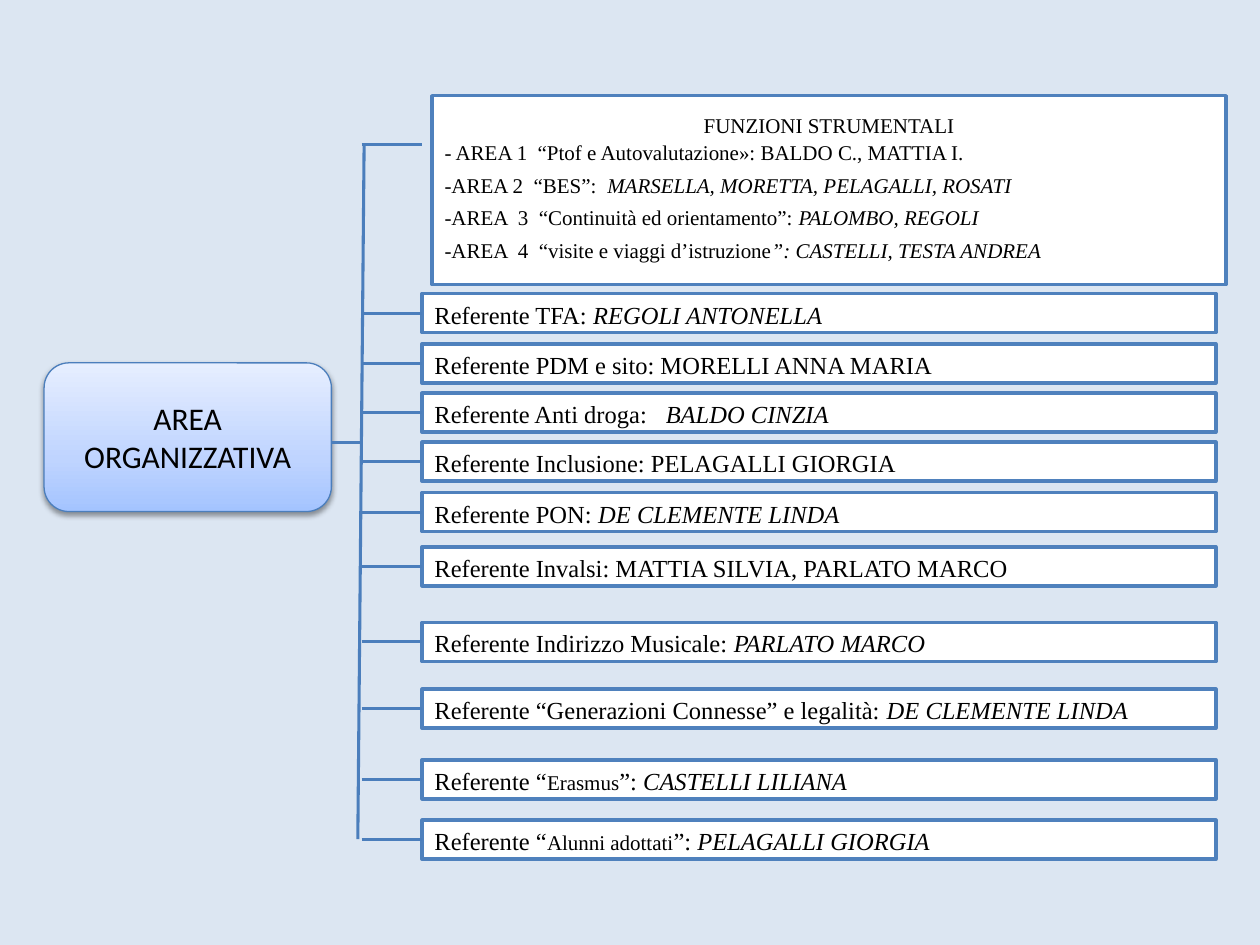
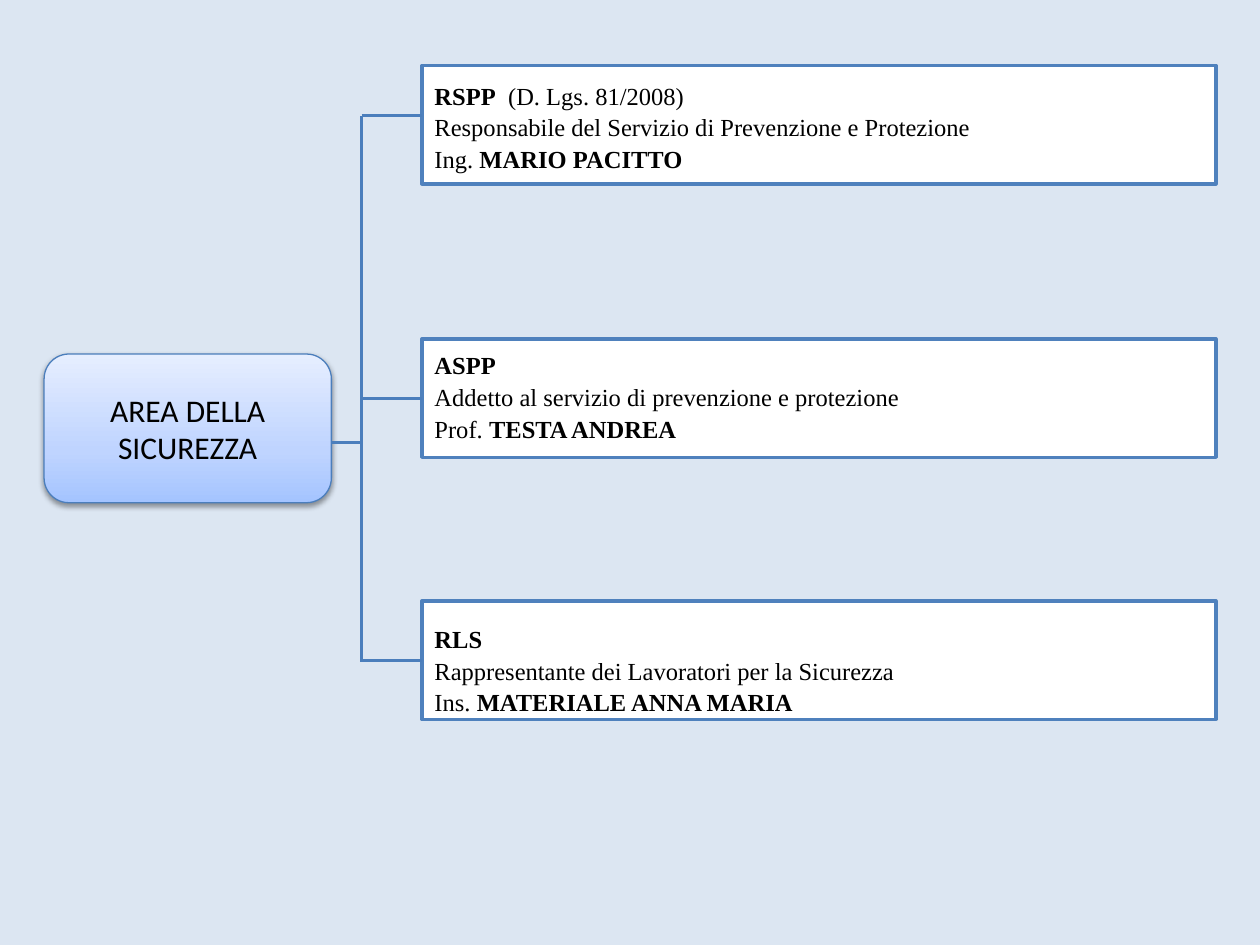
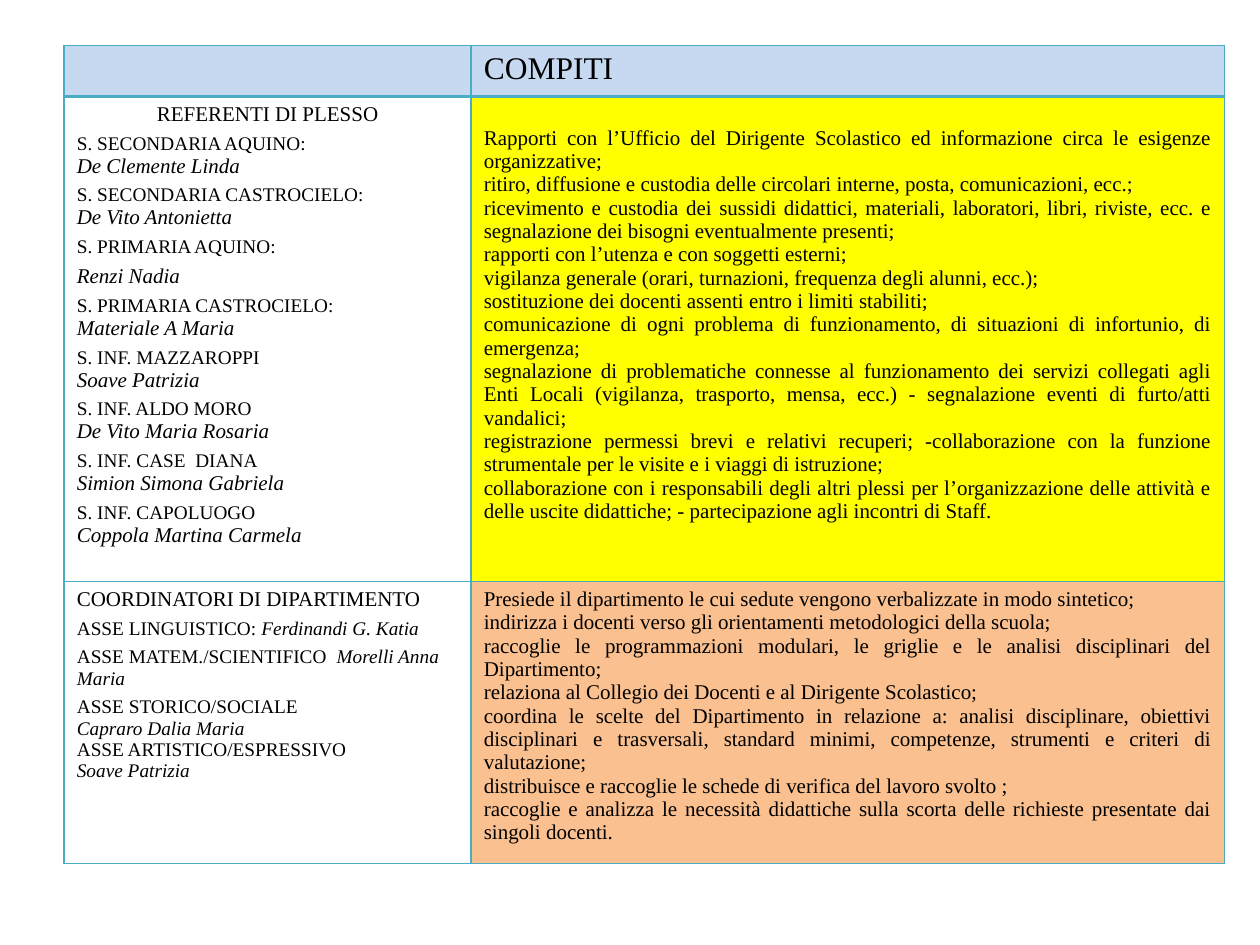
from dataclasses import dataclass

from lxml import etree
from pptx import Presentation
from pptx import util as u
from pptx.dml.color import RGBColor
from pptx.enum import shapes, text
from pptx.oxml.ns import qn


@dataclass(frozen=True)
class Theme:
    """Colours, fonts, type sizes and line widths of the deck."""
    page: str = "DCE6F2"
    white: str = "FFFFFF"
    ink: str = "000000"
    box_line: str = "4F81BD"
    branch: str = "4B7EBC"
    grid: str = "4BACC6"
    header: str = "C6D9F1"
    yellow: str = "FFFF00"
    orange: str = "FAC090"
    hub_stops: tuple = ((0, "A4C4FF"), (35, "BFD4FF"), (100, "E6EEFF"))
    serif: str = "Times New Roman"
    sans: str = "Calibri"
    title: int = 18
    role: int = 14
    body: int = 12
    label: int = 11
    box_width: float = 2
    branch_width: float = 1.75
    hub_width: float = 0.75
    leading: float = 1.08


@dataclass(frozen=True)
class Line:
    """One paragraph: *marks* stand out and ~marks~ are small."""
    text: str
    size: int = 12
    after: int = 0
    align: text.PP_ALIGN = text.PP_ALIGN.LEFT


THEME = Theme()
BOX_LEFT, BOX_WIDTH = 3.35, 6.3
HUB_LEFT, HUB_WIDTH, HUB_HEIGHT = 0.35, 2.28, 1.18
SPINE_X, TRUNK_Y = 2.87, 3.51
ROLE_HEIGHT, SAFETY_HEIGHT = 0.31, 0.94

FUNCTIONS = [
    Line("FUNZIONI STRUMENTALI", align=text.PP_ALIGN.CENTER),
    Line("- AREA 1  “Ptof e Autovalutazione»: BALDO C., MATTIA I.", after=3),
    Line("-AREA 2  “BES”:  *MARSELLA, MORETTA, PELAGALLI, ROSATI*", after=3),
    Line("-AREA  3  “Continuità ed orientamento”: *PALOMBO, REGOLI*", after=3),
    Line("-AREA  4  “visite e viaggi d’istruzione*”: CASTELLI, TESTA ANDREA*", after=3),
]

ROLES = [
    (2.33, "Referente TFA: *REGOLI ANTONELLA*"),
    (2.73, "Referente PDM e sito: MORELLI ANNA MARIA"),
    (3.12, "Referente Anti droga:   *BALDO CINZIA*"),
    (3.51, "Referente Inclusione: PELAGALLI GIORGIA"),
    (3.91, "Referente PON: *DE CLEMENTE LINDA*"),
    (4.34, "Referente Invalsi: MATTIA SILVIA, PARLATO MARCO"),
    (4.94, "Referente Indirizzo Musicale: *PARLATO MARCO*"),
    (5.47, "Referente “Generazioni Connesse” e legalità: *DE CLEMENTE LINDA*"),
    (6.03, "Referente “~Erasmus~”: *CASTELLI LILIANA*"),
    (6.51, "Referente “~Alunni adottati~”: *PELAGALLI GIORGIA*"),
]

SAFETY = [
    (0.52, 0.01, ["*RSPP*  (D. Lgs. 81/2008)",
                  "Responsabile del Servizio di Prevenzione e Protezione",
                  "Ing. *MARIO PACITTO*"]),
    (2.69, -0.02, ["*ASPP*",
                   "Addetto al servizio di prevenzione e protezione",
                   "Prof. *TESTA ANDREA*"]),
    (4.77, 0.07, ["*RLS*",
                  "Rappresentante dei Lavoratori per la Sicurezza",
                  "Ins. *MATERIALE ANNA MARIA*"]),
]

SCHOOLS = [
    ("S. SECONDARIA AQUINO:", 0, "De Clemente Linda"),
    ("S. SECONDARIA CASTROCIELO:", 0, "De Vito Antonietta"),
    ("S. PRIMARIA AQUINO:", 4, "Renzi Nadia"),
    ("S. PRIMARIA CASTROCIELO:", 0, "Materiale A Maria"),
    ("S. INF. MAZZAROPPI", 0, "Soave Patrizia"),
    ("S. INF. ALDO MORO", 0, "De Vito Maria Rosaria"),
    ("S. INF. CASE  DIANA", 0, "Simion Simona Gabriela"),
    ("S. INF. CAPOLUOGO", 0, "Coppola Martina Carmela"),
]

SCHOOL_DUTIES = [
    "Rapporti con l’Ufficio del Dirigente Scolastico ed informazione circa le esigenze organizzative;",
    "ritiro, diffusione e custodia delle circolari interne, posta, comunicazioni, ecc.;",
    "ricevimento e custodia dei sussidi didattici, materiali, laboratori, libri, riviste, ecc. e "
    "segnalazione dei bisogni eventualmente presenti;",
    "rapporti con l’utenza e con soggetti esterni;",
    "vigilanza generale (orari, turnazioni, frequenza degli alunni, ecc.);",
    "sostituzione dei docenti assenti entro i limiti stabiliti;",
    "comunicazione di ogni problema di funzionamento, di situazioni di infortunio, di emergenza;",
    "segnalazione di problematiche connesse al funzionamento dei servizi collegati agli Enti Locali "
    "(vigilanza, trasporto, mensa, ecc.) - segnalazione eventi di furto/atti vandalici;",
    "registrazione permessi brevi e relativi recuperi; -collaborazione con la funzione strumentale "
    "per le visite e i viaggi di istruzione;",
    "collaborazione con i responsabili degli altri plessi per l’organizzazione delle attività e "
    "delle uscite didattiche; - partecipazione agli incontri di Staff.",
]

DEPARTMENTS = [
    ("ASSE LINGUISTICO: *Ferdinandi G. Katia*", 4),
    ("ASSE MATEM./SCIENTIFICO  *Morelli Anna Maria*", 4),
    ("ASSE STORICO/SOCIALE", 0),
    ("*Capraro Dalia Maria*", 0),
    ("ASSE ARTISTICO/ESPRESSIVO", 0),
    ("*Soave Patrizia*", 0),
]

DEPARTMENT_DUTIES = [
    "Presiede il dipartimento le cui sedute vengono verbalizzate in modo sintetico;",
    "indirizza i docenti verso gli orientamenti metodologici della scuola;",
    "raccoglie le programmazioni modulari, le griglie e le analisi disciplinari del Dipartimento;",
    "relaziona al Collegio dei Docenti e al Dirigente Scolastico;",
    "coordina le scelte del Dipartimento in relazione a: analisi disciplinare, obiettivi disciplinari "
    "e trasversali, standard minimi, competenze, strumenti e criteri di valutazione;",
    "distribuisce e raccoglie le schede di verifica del lavoro svolto ;",
    "raccoglie e analizza le necessità didattiche sulla scorta delle richieste presentate dai singoli docenti.",
]


def rgb(colour):
    """Turn a hex string into a colour."""
    return RGBColor.from_string(colour)


def write(frame, lines, font=THEME.serif, strong="italic", leading=None):
    """Fill a text frame with lines, styling their marked parts."""
    frame.word_wrap = True
    for index, line in enumerate(lines):
        para = frame.add_paragraph() if index else frame.paragraphs[0]
        para.alignment = line.align
        para.space_after = u.Pt(line.after)
        if leading:
            para.line_spacing = leading
        for part, piece in enumerate(line.text.split("*")):
            for bit, words in enumerate(piece.split("~")):
                if words:
                    span = para.add_run()
                    span.text = words
                    span.font.name = font
                    span.font.size = u.Pt(THEME.body if bit % 2 else line.size)
                    span.font.color.rgb = rgb(THEME.ink)
                    setattr(span.font, strong, part % 2 == 1)


def add_page(deck, colour):
    """Add a blank slide with a plain background."""
    page = deck.slides.add_slide(deck.slide_layouts[6])
    page.background.fill.solid()
    page.background.fill.fore_color.rgb = rgb(colour)
    return page


def add_line(page, start, end):
    """Draw a straight line without a shadow."""
    line = page.shapes.add_connector(shapes.MSO_CONNECTOR.STRAIGHT,
                                     *(u.Inches(value) for value in (*start, *end)))
    line.line.color.rgb = rgb(THEME.branch)
    line.line.width = u.Pt(THEME.branch_width)
    etree.SubElement(line._element.spPr, qn("a:effectLst"))
    return line


def add_branch(page, box):
    """Link the spine to the left side of a box."""
    middle = (box.top + box.height / 2) / u.Inches(1)
    add_line(page, (SPINE_X, middle), (BOX_LEFT, middle)).end_connect(box, 1)


def add_shape(page, kind, left, top, width, height, colour, weight):
    """Add an outlined shape without inherited shadow."""
    shape = page.shapes.add_shape(kind, *(u.Inches(value) for value in (left, top, width, height)))
    shape.shadow.inherit = False
    shape.line.color.rgb = rgb(colour)
    shape.line.width = u.Pt(weight)
    shape.text_frame.vertical_anchor = text.MSO_ANCHOR.MIDDLE
    return shape


def add_box(page, left, top, height, lines, strong="italic", shift=0):
    """Add a white box whose text sits shift inches below the middle."""
    box = add_shape(page, shapes.MSO_SHAPE.RECTANGLE, left, top, BOX_WIDTH, height,
                    THEME.box_line, THEME.box_width)
    box.fill.solid()
    box.fill.fore_color.rgb = rgb(THEME.white)
    frame = box.text_frame
    frame.margin_top = u.Inches(max(0, 2 * shift))
    frame.margin_bottom = u.Inches(max(0, -2 * shift))
    write(frame, lines, strong=strong, leading=THEME.leading)
    return box


def add_hub(page, top, title):
    """Add the shaded area box and its trunk."""
    hub = add_shape(page, shapes.MSO_SHAPE.ROUNDED_RECTANGLE, HUB_LEFT, top, HUB_WIDTH, HUB_HEIGHT,
                    THEME.branch, THEME.hub_width)
    hub.fill.gradient()
    hub.fill.gradient_angle = 90
    properties = hub._element.spPr
    stops = properties.find(".//" + qn("a:gsLst"))
    for stop in list(stops):
        stops.remove(stop)
    for position, colour in THEME.hub_stops:
        stop = etree.SubElement(stops, qn("a:gs"), pos=str(position * 1000))
        etree.SubElement(stop, qn("a:srgbClr"), val=colour)
    shadow = etree.SubElement(properties.find(qn("a:effectLst")), qn("a:outerShdw"),
                              blurRad=str(u.Pt(3.1)), dist=str(u.Pt(1.6)), dir="5400000",
                              rotWithShape="0")
    shade = etree.SubElement(shadow, qn("a:srgbClr"), val=THEME.ink)
    etree.SubElement(shade, qn("a:alpha"), val="38000")
    write(hub.text_frame, [Line(title, THEME.title, align=text.PP_ALIGN.CENTER)], THEME.sans)
    add_line(page, (HUB_LEFT + HUB_WIDTH, TRUNK_Y), (SPINE_X, TRUNK_Y))


def fill_cell(cell, colour=None, opacity=100):
    """Fill a cell, or leave it clear."""
    if colour is None:
        cell.fill.background()
        return
    cell.fill.solid()
    cell.fill.fore_color.rgb = rgb(colour)
    if opacity < 100:
        tint = cell._tc.tcPr.find(".//" + qn("a:srgbClr"))
        etree.SubElement(tint, qn("a:alpha"), val=str(opacity * 1000))


def border_cell(cell, top=1, bottom=1):
    """Draw the four borders of a cell."""
    properties = cell._tc.get_or_add_tcPr()
    for side, weight in (("L", 1), ("R", 1), ("T", top), ("B", bottom)):
        edge = etree.SubElement(properties, qn("a:ln" + side), w=str(u.Pt(weight)))
        paint = etree.SubElement(edge, qn("a:solidFill"))
        etree.SubElement(paint, qn("a:srgbClr"), val=THEME.grid)


def duties(items):
    """Make justified lines of a list of duties."""
    return [Line(item, THEME.body, align=text.PP_ALIGN.JUSTIFY) for item in items]


def build_organisation(deck):
    """Build the chart of the organisation area."""
    page = add_page(deck, THEME.page)
    add_hub(page, 2.88, "AREA ORGANIZZATIVA")
    add_box(page, 3.43, 0.76, 1.5, FUNCTIONS, shift=-0.03)
    add_line(page, (2.89, 1.15), (2.84, 6.66))
    add_line(page, (SPINE_X, 1.15), (BOX_LEFT, 1.15))
    for top, role in ROLES:
        add_branch(page, add_box(page, BOX_LEFT, top, ROLE_HEIGHT, [Line(role, THEME.role)]))


def build_safety(deck):
    """Build the chart of the safety area."""
    page = add_page(deck, THEME.page)
    add_hub(page, 2.81, "AREA DELLA SICUREZZA")
    first, *others = [
        add_box(page, BOX_LEFT, top, SAFETY_HEIGHT,
                [Line(item, THEME.role) for item in items], "bold", shift)
        for top, shift, items in SAFETY]
    add_line(page, (SPINE_X, 0.92), (SPINE_X, 5.25))
    add_line(page, (SPINE_X, 0.92), (BOX_LEFT, 0.92))
    for box in others:
        add_branch(page, box)


def build_duties(deck):
    """Build the table of roles and duties."""
    page = add_page(deck, THEME.white)
    widths, heights = (3.23, 5.98), (0.4, 3.85, 2.24)
    table = page.shapes.add_table(3, 2, u.Inches(0.51), u.Inches(0.36),
                                  u.Inches(sum(widths)), u.Inches(sum(heights))).table
    table.first_row = table.horz_banding = False
    for column, width in zip(table.columns, widths):
        column.width = u.Inches(width)
    for row, height in zip(table.rows, heights):
        row.height = u.Inches(height)
    schools = [Line("REFERENTI DI PLESSO", THEME.body, 4, text.PP_ALIGN.CENTER)]
    for school, after, name in SCHOOLS:
        schools += [Line(school, THEME.label, after), Line(f"*{name}*", THEME.body, 4)]
    departments = [Line("COORDINATORI DI DIPARTIMENTO", THEME.body, 4)]
    departments += [Line(item, THEME.label, after) for item, after in DEPARTMENTS]
    content = [
        (([], THEME.header, 100), ([Line("COMPITI", THEME.title)], THEME.header, 100)),
        ((schools, None, 100), (duties(SCHOOL_DUTIES), THEME.yellow, 35)),
        ((departments, None, 100), (duties(DEPARTMENT_DUTIES), THEME.orange, 36)),
    ]
    for row, entries in enumerate(content):
        for column, (lines, colour, opacity) in enumerate(entries):
            cell = table.cell(row, column)
            write(cell.text_frame, lines)
            border_cell(cell, top=2 if row == 1 else 1, bottom=2 if row == 0 else 1)
            fill_cell(cell, colour, opacity)
    table.cell(1, 1).margin_top = u.Inches(0.24)


def main():
    """Build the deck and save it."""
    deck = Presentation()
    deck.slide_width, deck.slide_height = u.Inches(10), u.Inches(7.5)
    build_organisation(deck)
    build_safety(deck)
    build_duties(deck)
    deck.save("out.pptx")


if __name__ == "__main__":
    main()
